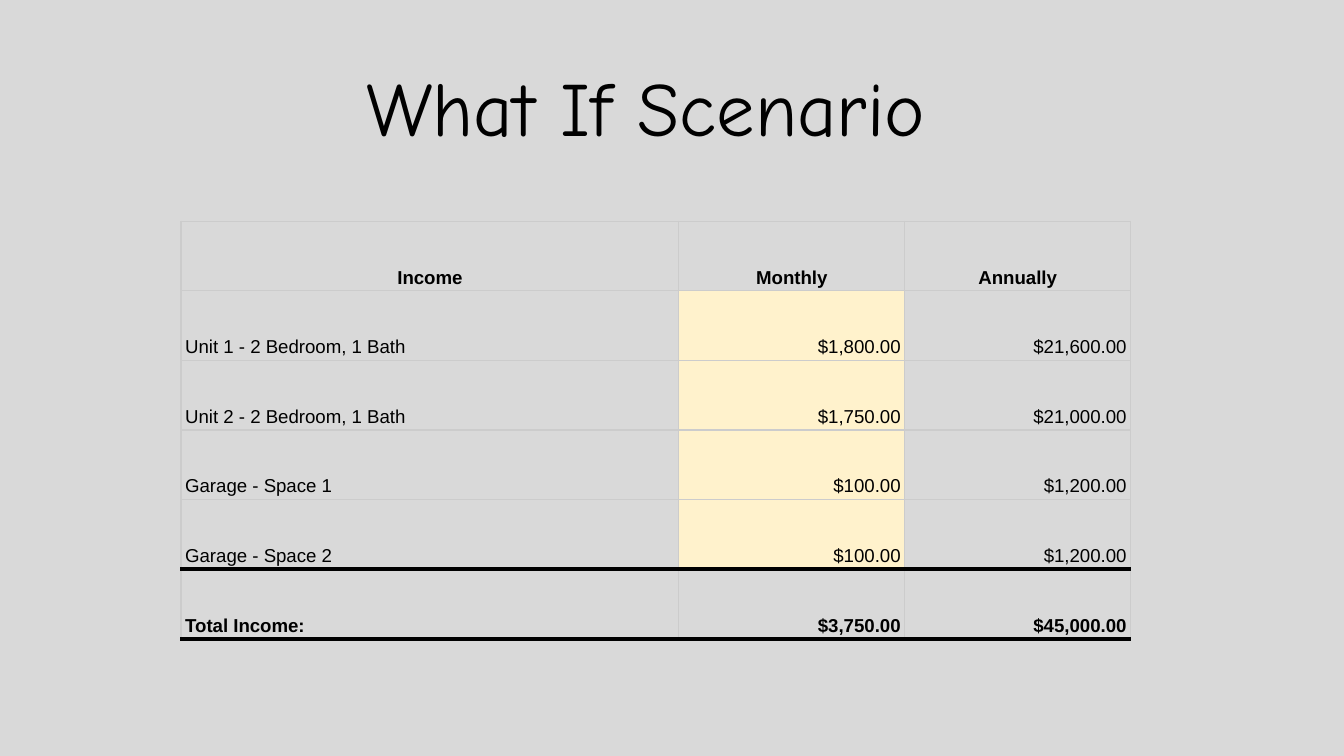
from lxml.etree import SubElement
from pptx import Presentation
from pptx.dml.color import RGBColor
from pptx.enum.text import MSO_ANCHOR as Anchor, MSO_AUTO_SIZE as AutoSize, PP_ALIGN as Align
from pptx.oxml.ns import qn
from pptx.util import Cm, Pt

BLACK, GRAY, GRID, CREAM = "000000", "D9D9D9", "CCCCCC", "FFF2CC"
THIN, THICK = (GRID, 0.75), (BLACK, 2.25)
COLUMN_WIDTHS = (9.41, 4.27, 4.27)
INCOME = [
    ("Income", "Monthly", "Annually"),
    ("Unit 1 - 2 Bedroom, 1 Bath", "$1,800.00", "$21,600.00"),
    ("Unit 2 - 2 Bedroom, 1 Bath", "$1,750.00", "$21,000.00"),
    ("Garage - Space 1", "$100.00", "$1,200.00"),
    ("Garage - Space 2", "$100.00", "$1,200.00"),
    ("Total Income:", "$3,750.00", "$45,000.00"),
]


def color(hex_code):
    return RGBColor.from_string(hex_code)


def format_text(para, font_name, size, bold=False):
    for span in para.runs:
        span.font.name = font_name
        span.font.size = Pt(size)
        span.font.bold = bold
        span.font.color.rgb = color(BLACK)


def set_borders(cell, **sides):
    """Draw the L, R, T and B sides, in that order, as (colour, points)."""
    properties = cell._tc.get_or_add_tcPr()
    for side, (hex_code, points) in sides.items():
        line = SubElement(properties, qn(f"a:ln{side}"), w=str(Pt(points)))
        fill = SubElement(line, qn("a:solidFill"))
        SubElement(fill, qn("a:srgbClr"), val=hex_code)


def fill_title(page, left, top, width, height):
    title = page.shapes.title
    title.left, title.top, title.width, title.height = left, top, width, height
    frame = title.text_frame
    frame.text = "What If Scenario "
    frame.word_wrap = True
    frame.auto_size = AutoSize.NONE
    frame.vertical_anchor = Anchor.TOP
    frame.margin_left = frame.margin_right = Cm(0.25)
    frame.margin_top = frame.margin_bottom = Cm(0.25)
    para = frame.paragraphs[0]
    para.alignment = Align.CENTER
    format_text(para, "Comic Neue", 41)


def fill_cell(cell, text, row, column):
    last = len(INCOME) - 1
    is_header, is_total = row == 0, row == last
    set_borders(cell, L=THIN, R=THIN,
                T=THICK if is_total else THIN,
                B=THICK if row >= last - 1 else THIN)
    if column == 1 and not (is_header or is_total):
        cell.fill.solid()
        cell.fill.fore_color.rgb = color(CREAM)
    else:
        cell.fill.background()
    cell.margin_left = cell.margin_right = Cm(0.08)
    cell.margin_top = cell.margin_bottom = Cm(0.05)
    cell.vertical_anchor = Anchor.BOTTOM
    cell.text_frame.text = text
    para = cell.text_frame.paragraphs[0]
    para.line_spacing = 1.15
    if is_header:
        para.alignment = Align.CENTER
    else:
        para.alignment = Align.RIGHT if column else Align.LEFT
    format_text(para, "Arial", 10, bold=is_header or is_total)


def add_income_table(page, left, top, width, height):
    table = page.shapes.add_table(
        len(INCOME), len(COLUMN_WIDTHS), left, top, width, height).table
    table.first_row = table.horz_banding = False
    for column, share in zip(table.columns, COLUMN_WIDTHS):
        column.width = int(width * share / sum(COLUMN_WIDTHS))
    for row, texts in enumerate(INCOME):
        for column, text in enumerate(texts):
            fill_cell(table.cell(row, column), text, row, column)


def main():
    deck = Presentation()
    deck.slide_width, deck.slide_height = Cm(25.4), Cm(14.29)
    page = deck.slides.add_slide(deck.slide_layouts[5])
    page.background.fill.solid()
    page.background.fill.fore_color.rgb = color(GRAY)
    fill_title(page, Cm(2.46), Cm(0.89), Cm(19.99), Cm(2.9))
    add_income_table(page, Cm(3.42), Cm(4.18), Cm(17.95), Cm(7.9))
    deck.save("out.pptx")


if __name__ == "__main__":
    main()
